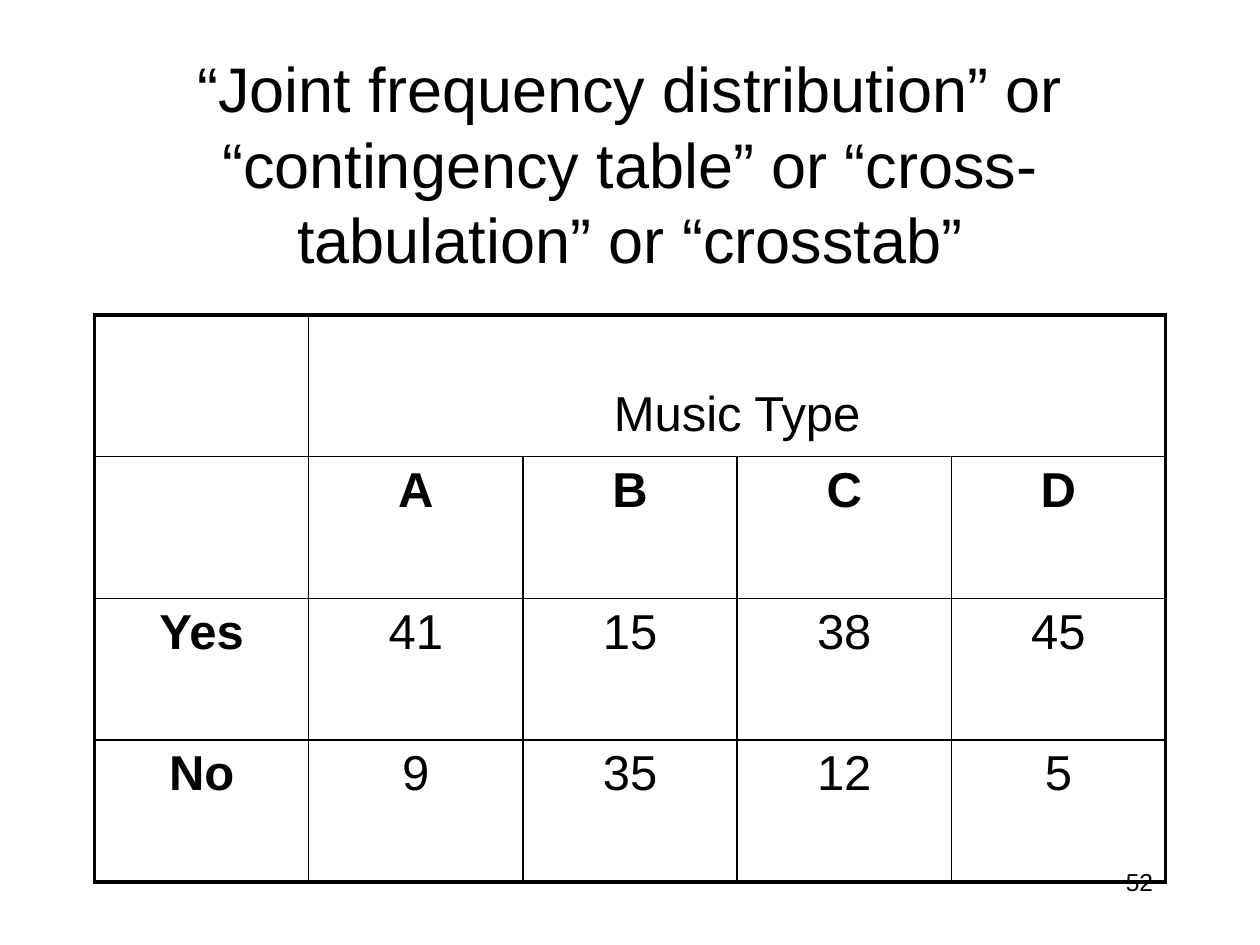
from pptx import Presentation
from pptx.dml.color import RGBColor
from pptx.enum.text import MSO_ANCHOR, MSO_AUTO_SIZE, PP_ALIGN
from pptx.oxml.ns import qn
from pptx.util import Inches, Pt
from lxml.etree import SubElement

INK = "000000"
THIN, THICK = 1, 2.25
HEADING = "“Joint frequency distribution” or “contingency table” or “cross-tabulation” or “crosstab”"
MUSIC_TYPES = ["A", "B", "C", "D"]
COUNTS = {"Yes": [41, 15, 38, 45], "No": [9, 35, 12, 5]}


def color(hex_string):
    """Turn a hex string into a colour."""
    return RGBColor.from_string(hex_string)


def write(frame, text, size, align, bold=False):
    """Write one formatted paragraph into a text frame."""
    frame.text = text
    paragraph = frame.paragraphs[0]
    paragraph.alignment = align
    paragraph.font.name = "Arial"
    paragraph.font.size = Pt(size)
    paragraph.font.bold = bold
    paragraph.font.color.rgb = color(INK)


def set_borders(cell, widths):
    """Draw the left, right, top and bottom borders of a cell."""
    properties = cell._tc.get_or_add_tcPr()
    for side, width in zip("LRTB", widths):
        line = SubElement(properties, qn(f"a:ln{side}"), w=str(Pt(width)))
        fill = SubElement(line, qn("a:solidFill"))
        SubElement(fill, qn("a:srgbClr"), val=INK)


def add_heading(slide, left, top, width, height):
    """Place the title in its box."""
    title = slide.shapes.title
    title.left, title.top, title.width, title.height = map(Inches, (left, top, width, height))
    frame = title.text_frame
    frame.word_wrap = True
    frame.auto_size = MSO_AUTO_SIZE.NONE
    frame.vertical_anchor = MSO_ANCHOR.MIDDLE
    write(frame, HEADING, 36, PP_ALIGN.CENTER)


def add_crosstab(slide, left, top, width, height):
    """Place the contingency table in its box."""
    rows = [["", "Music Type", "", "", ""], ["", *MUSIC_TYPES]]
    rows += [[answer, *map(str, counts)] for answer, counts in COUNTS.items()]
    last_row, last_column = len(rows) - 1, len(rows[0]) - 1
    table = slide.shapes.add_table(
        len(rows), len(rows[0]), *map(Inches, (left, top, width, height))
    ).table
    table.first_row = table.horz_banding = False
    music_header = table.cell(0, 1)
    music_header.merge(table.cell(0, last_column))

    for r, row in enumerate(rows):
        for c, text in enumerate(row):
            cell = table.cell(r, c)
            end_column = c + cell.span_width - 1 if cell.is_merge_origin else c
            edges = (c == 0, end_column == last_column, r == 0, r == last_row)
            set_borders(cell, [THICK if edge else THIN for edge in edges])
            cell.fill.background()
            if text:
                bold = r == 1 or c == 0
                write(cell.text_frame, text, 28, PP_ALIGN.CENTER, bold)

    music_header.vertical_anchor = MSO_ANCHOR.BOTTOM
    music_header.margin_bottom = Inches(0.12)


def add_page_number(slide, left, top, width, height):
    """Place the page number in its box."""
    number = slide.shapes.add_textbox(*map(Inches, (left, top, width, height)))
    number.text_frame.word_wrap = True
    write(number.text_frame, "52", 14, PP_ALIGN.RIGHT)


def main():
    """Build and save the slide."""
    presentation = Presentation()
    presentation.slide_width, presentation.slide_height = Inches(10), Inches(7.5)
    slide = presentation.slides.add_slide(presentation.slide_layouts.get_by_name("Title Only"))
    add_heading(slide, 0.75, 0.67, 8.5, 1.25)
    add_crosstab(slide, 0.75, 2.5, 8.5, 4.5)
    add_page_number(slide, 7.17, 6.83, 2.08, 0.5)
    presentation.save("out.pptx")


if __name__ == "__main__":
    main()
